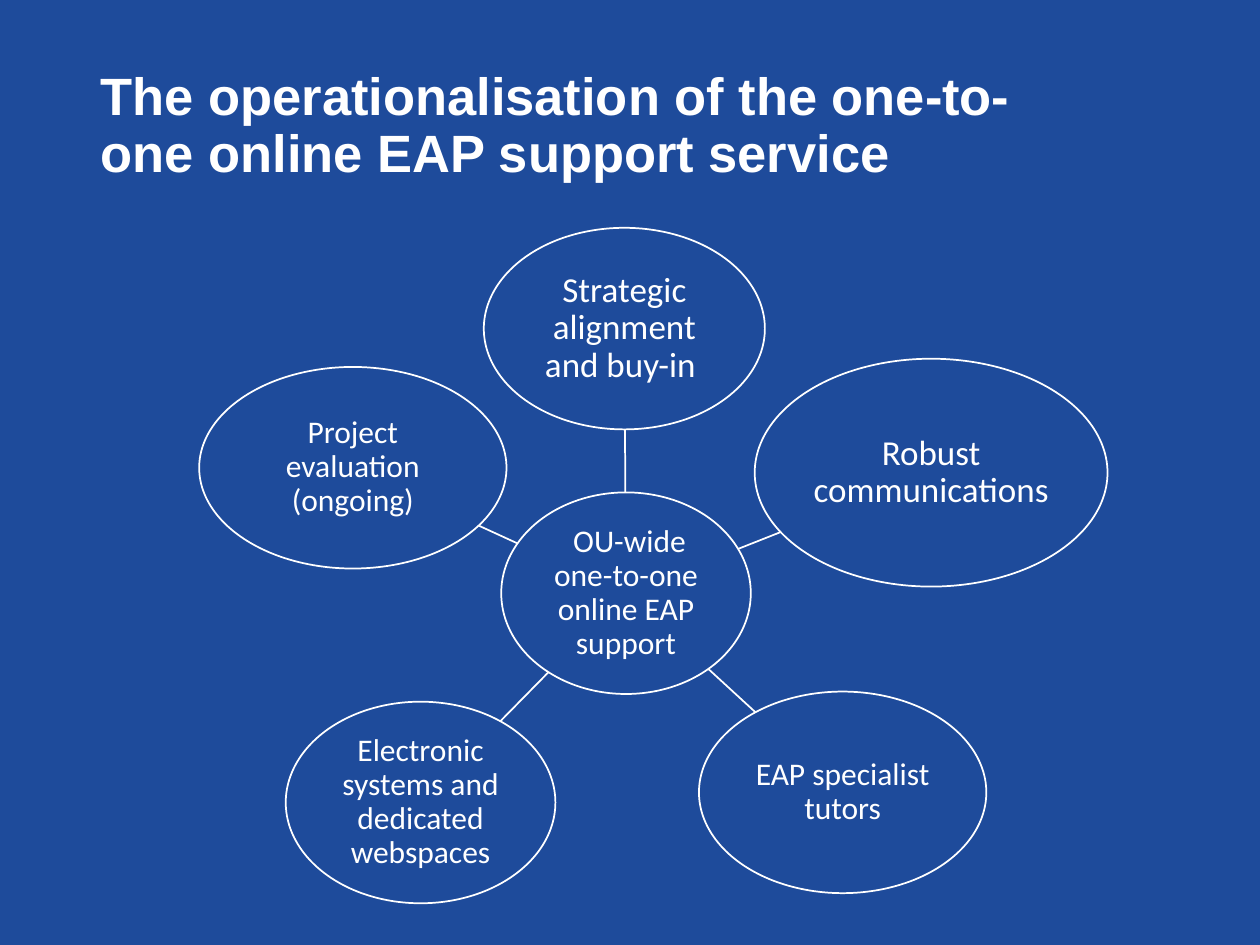
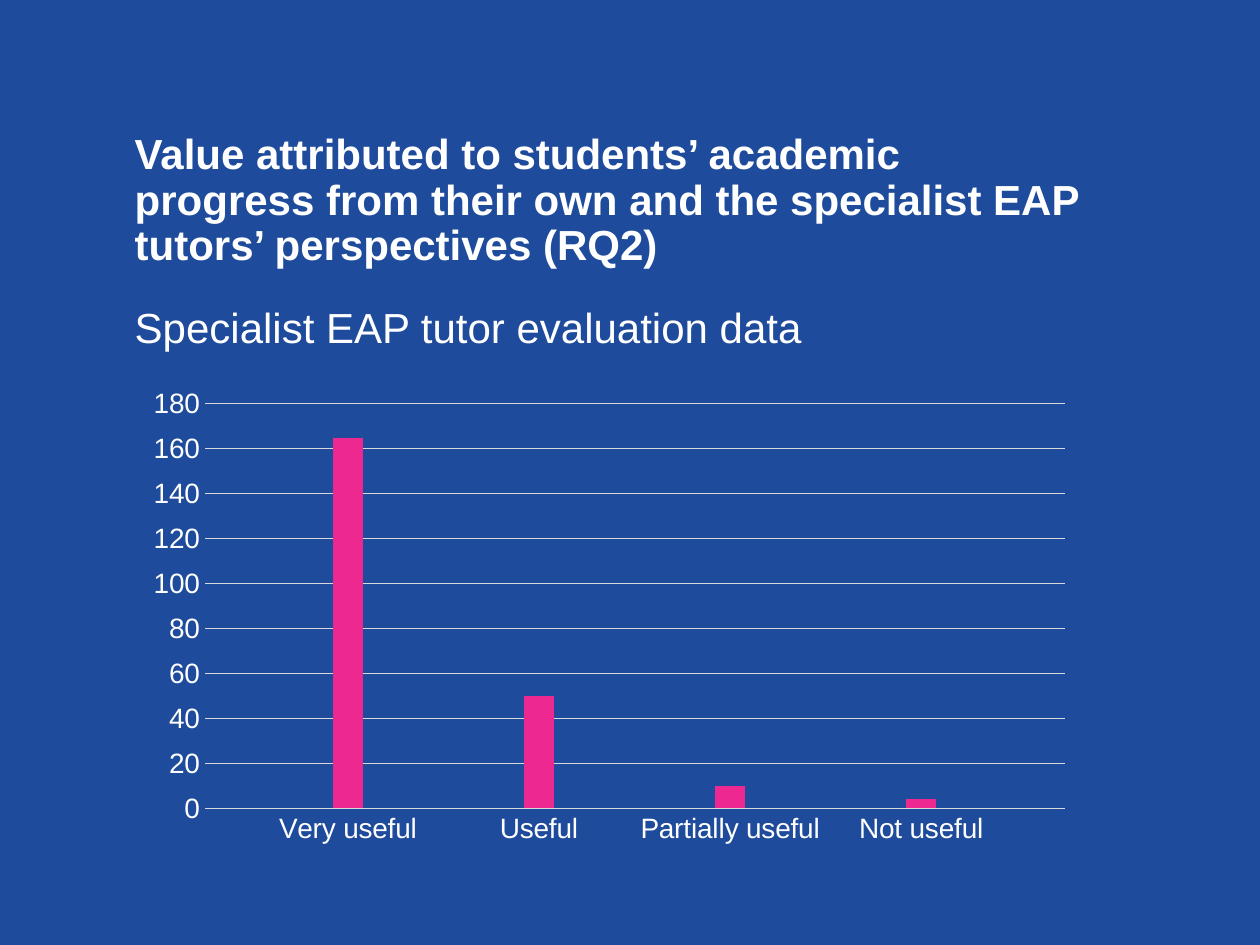
"""Build two slides: a hub diagram of the EAP support service and a tutor evaluation chart."""
from dataclasses import dataclass
from math import hypot

from lxml.etree import SubElement
from pptx import Presentation
from pptx.chart.data import CategoryChartData
from pptx.dml.color import RGBColor
from pptx.enum.chart import XL_CHART_TYPE, XL_TICK_MARK
from pptx.enum.shapes import MSO_CONNECTOR, MSO_SHAPE
from pptx.enum.text import MSO_ANCHOR, MSO_AUTO_SIZE, PP_ALIGN
from pptx.oxml.ns import qn
from pptx.util import Pt

BLUE = "1E4B9B"
WHITE = "FFFFFF"
PINK = "ED2891"
GREY = "D9D9D9"
HEADING_FONT = "Arial"
DIAGRAM_FONT = "Calibri"


@dataclass(frozen=True)
class Box:
    left: float
    top: float
    width: float
    height: float

    @property
    def center(self) -> tuple[float, float]:
        return self.left + self.width / 2, self.top + self.height / 2

    def lengths(self) -> tuple:
        return Pt(self.left), Pt(self.top), Pt(self.width), Pt(self.height)

    def edge_towards(self, other: "Box") -> tuple[float, float]:
        x, y = self.center
        run, rise = other.center[0] - x, other.center[1] - y
        scale = 1 / hypot(run / (self.width / 2), rise / (self.height / 2))
        return x + run * scale, y + rise * scale


@dataclass(frozen=True)
class Bubble:
    text: str
    box: Box
    size: int = 18


HUB = Bubble(" OU-wide one-to-one online EAP support", Box(286.4, 281.4, 142.6, 115.2))
SPOKES = [
    Bubble("Strategic alignment and buy-in ", Box(276.5, 130.2, 160.6, 115.2), 20),
    Bubble("Robust communications", Box(431.3, 205, 201.6, 130.2), 20),
    Bubble("Electronic systems and dedicated webspaces", Box(163.3, 401, 154.1, 115.2)),
    Bubble("EAP specialist tutors", Box(399.4, 395.2, 164.2, 115.2)),
    Bubble("Project evaluation (ongoing)", Box(113.8, 209.7, 175.6, 115.2)),
]
RATINGS = {"Very useful": 165, "Useful": 50, "Partially useful": 10, "Not useful": 4}


def rgb(color: str) -> RGBColor:
    return RGBColor.from_string(color)


def style_font(font, name: str, size: float, bold: bool = False) -> None:
    font.name = name
    font.size = Pt(size)
    font.bold = bold
    font.color.rgb = rgb(WHITE)


def style_line(line, color: str, width: float) -> None:
    line.color.rgb = rgb(color)
    line.width = Pt(width)


def write_text(text_frame, text: str, font: str, size: float, inset: float,
               anchor, alignment, bold: bool = False) -> None:
    text_frame.text = text
    text_frame.word_wrap = True
    text_frame.vertical_anchor = anchor
    text_frame.margin_left = text_frame.margin_right = Pt(inset)
    text_frame.margin_top = text_frame.margin_bottom = Pt(inset)
    for paragraph in text_frame.paragraphs:
        paragraph.alignment = alignment
        paragraph.line_spacing = 0.9
        paragraph.space_before = Pt(0)
        for run in paragraph.runs:
            style_font(run.font, font, size, bold)


def fill_placeholder(placeholder, text: str, box: Box, size: float, bold: bool) -> None:
    placeholder.left, placeholder.top, placeholder.width, placeholder.height = box.lengths()
    write_text(placeholder.text_frame, text, HEADING_FONT, size, 0,
               MSO_ANCHOR.TOP, PP_ALIGN.LEFT, bold)
    placeholder.text_frame.auto_size = MSO_AUTO_SIZE.SHAPE_TO_FIT_TEXT


def add_bubble(slide, bubble: Bubble) -> None:
    shape = slide.shapes.add_shape(MSO_SHAPE.OVAL, *bubble.box.lengths())
    shape.shadow.inherit = False
    shape.fill.solid()
    shape.fill.fore_color.rgb = rgb(BLUE)
    style_line(shape.line, WHITE, 1)
    write_text(shape.text_frame, bubble.text, DIAGRAM_FONT, bubble.size, 0.72,
               MSO_ANCHOR.MIDDLE, PP_ALIGN.CENTER)


def add_spoke_line(slide, hub: Box, spoke: Box) -> None:
    ends = hub.edge_towards(spoke) + spoke.edge_towards(hub)
    connector = slide.shapes.add_connector(MSO_CONNECTOR.STRAIGHT, *map(Pt, ends))
    style_line(connector.line, WHITE, 1)
    SubElement(connector._element.spPr, qn("a:effectLst"))


def add_ratings_chart(slide, box: Box) -> None:
    data = CategoryChartData()
    values = [None]
    data.add_category("")
    for rating, count in RATINGS.items():
        data.add_category(rating)
        data.add_category("")
        values += [count, None]
    data.add_series("Series 1", values)
    chart = slide.shapes.add_chart(
        XL_CHART_TYPE.COLUMN_CLUSTERED, *box.lengths(), data).chart
    chart.has_legend = False
    chart.has_title = False
    style_font(chart.font, HEADING_FONT, 16)

    plot = chart.plots[0]
    plot.gap_width = 219
    plot.overlap = -27
    plot.vary_by_categories = False
    columns = plot.series[0].format.fill
    columns.solid()
    columns.fore_color.rgb = rgb(PINK)

    for axis in (chart.category_axis, chart.value_axis):
        axis.major_tick_mark = axis.minor_tick_mark = XL_TICK_MARK.NONE
        style_font(axis.tick_labels.font, HEADING_FONT, 16)
    style_line(chart.category_axis.format.line, GREY, 0.75)
    value_axis = chart.value_axis
    value_axis.minimum_scale, value_axis.maximum_scale = 0, 180
    value_axis.major_unit = 20
    value_axis.format.line.fill.background()
    style_line(value_axis.major_gridlines.format.line, GREY, 0.75)


def build_service_slide(slide) -> None:
    fill_placeholder(
        slide.shapes.title,
        "The operationalisation of the one-to-one online EAP support service",
        Box(57.6, 40.3, 539.3, 65.5), 30, True)
    subtitle = slide.placeholders[1]._element
    subtitle.getparent().remove(subtitle)
    add_bubble(slide, HUB)
    for spoke in SPOKES:
        add_spoke_line(slide, HUB.box, spoke.box)
        add_bubble(slide, spoke)


def build_evaluation_slide(slide) -> None:
    fill_placeholder(
        slide.shapes.title,
        "Value attributed to students’ academic\vprogress from their own and "
        "the specialist EAP \vtutors’ perspectives (RQ2)",
        Box(77, 76.3, 634.3, 78.5), 24, True)
    fill_placeholder(
        slide.placeholders[1], "Specialist EAP tutor evaluation data",
        Box(77, 175.7, 464.4, 41), 24, False)
    add_ratings_chart(slide, Box(77, 216.7, 542.2, 270.7))


def main() -> None:
    presentation = Presentation()
    presentation.slide_width, presentation.slide_height = Pt(720), Pt(540)
    background = presentation.slide_master.background.fill
    background.solid()
    background.fore_color.rgb = rgb(BLUE)
    for build in (build_service_slide, build_evaluation_slide):
        build(presentation.slides.add_slide(presentation.slide_layouts[0]))
    presentation.save("out.pptx")


if __name__ == "__main__":
    main()
